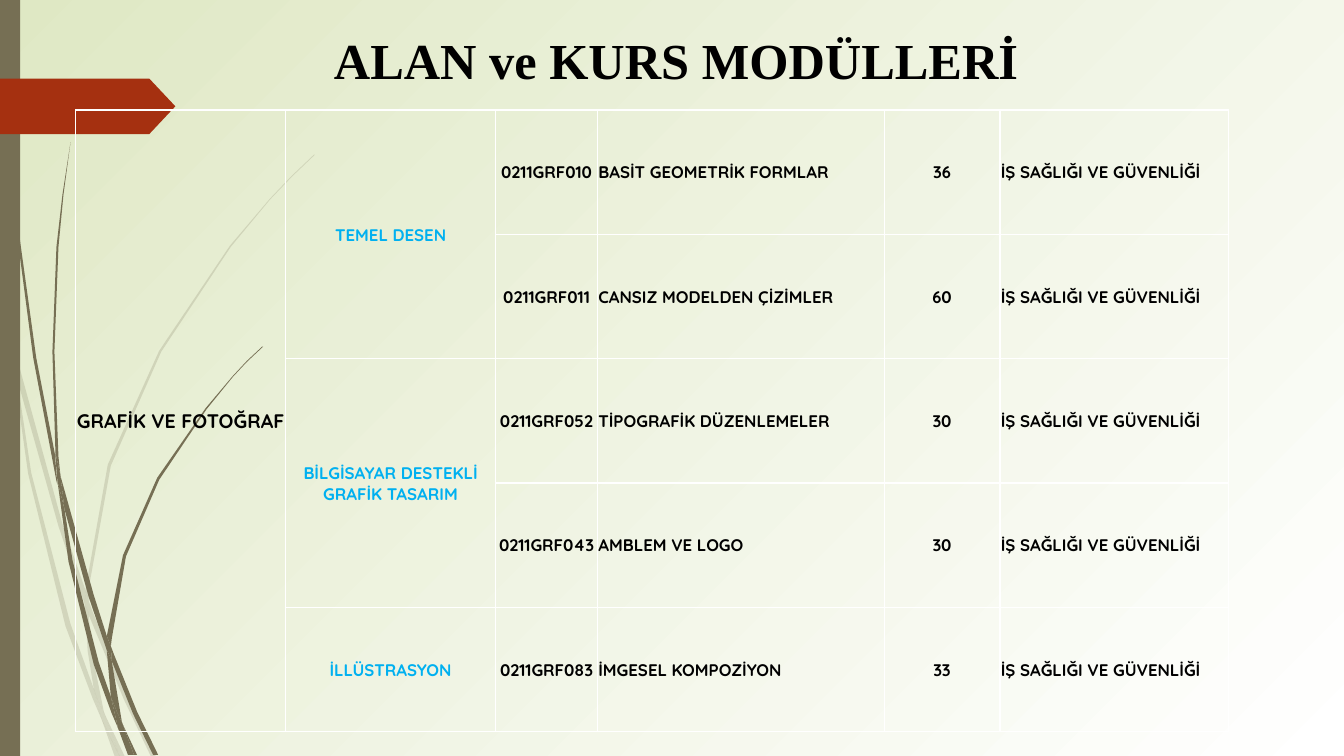
"""Builds the slide listing the modules of the graphics and photography courses."""
from lxml import etree
from pptx import Presentation
from pptx.dml.color import RGBColor
from pptx.enum.shapes import MSO_SHAPE
from pptx.enum.text import MSO_ANCHOR, PP_ALIGN
from pptx.oxml import parse_xml
from pptx.oxml.ns import qn
from pptx.util import Cm, Pt

LEFT, CENTER = PP_ALIGN.LEFT, PP_ALIGN.CENTER
TOP, MIDDLE = MSO_ANCHOR.TOP, MSO_ANCHOR.MIDDLE
RECTANGLE, PENTAGON = MSO_SHAPE.RECTANGLE, MSO_SHAPE.PENTAGON

NS = 'xmlns:a="http://schemas.openxmlformats.org/drawingml/2006/main"'
BLACK, WHITE, BLUE = "000000", "FFFFFF", "00B0F0"
OLIVE, RUST, PALE_GREEN = "766F54", "A53010", "DFE8C4"
BODY_FONT, TITLE_FONT = "Quicksand", "Times New Roman"

GRASS_UNIT = Cm(0.0254)
PALE_GRASS = [
    [(11, 350), (9, 322), (0, 282), (0, 299), (10, 344)],
    [(58, 522), (84, 599), (85, 586), (62, 520), (14, 345), (17, 376)],
    [(92, 607), (88, 596), (88, 610), (123, 694), (150, 751), (155, 751), (127, 692)],
    [(119, 751), (124, 751), (105, 711)],
    [(93, 683), (70, 619), (31, 469), (17, 376), (11, 350), (28, 470), (65, 621),
     (92, 693), (101, 714), (99, 707)],
    [(84, 599), (87, 646), (93, 683), (96, 692), (105, 711), (103, 706), (91, 646),
     (88, 610), (88, 608)],
    [(88, 584), (110, 462), (160, 349), (229, 245), (268, 198), (290, 175), (312, 154),
     (312, 153), (289, 175), (268, 197), (228, 244), (158, 348), (107, 461), (85, 584),
     (85, 586), (88, 596)],
    [(101, 714), (114, 751), (119, 751)],
    [(88, 608), (88, 610), (88, 596), (85, 586), (84, 599)],
    [(96, 692), (93, 683), (99, 707), (101, 714), (119, 751), (105, 711)],
]
DARK_GRASS = [
    [(7, 110), (17, 233), (33, 355), (56, 477), (57, 481), (55, 457), (55, 453),
     (36, 355), (19, 232), (8, 109), (5, 48), (4, 0), (3, 0), (4, 48)],
    [(88, 592), (106, 645), (106, 633), (106, 631), (93, 590), (60, 472), (64, 505)],
    [(113, 649), (110, 641), (111, 656), (132, 708), (152, 749), (157, 749), (136, 706)],
    [(110, 691), (98, 657), (72, 556), (64, 505), (57, 477), (68, 557), (93, 659),
     (111, 708), (117, 722), (116, 717)],
    [(60, 472), (58, 453), (54, 349), (58, 245), (63, 193), (70, 141), (62, 193),
     (56, 245), (52, 349), (55, 449)],
    [(133, 749), (136, 749), (122, 719)],
    [(57, 477), (64, 505), (60, 472), (55, 449), (55, 453)],
    [(111, 633), (125, 552), (158, 476), (205, 406), (231, 374), (245, 359), (261, 344),
     (260, 344), (245, 358), (231, 373), (204, 405), (156, 474), (122, 551), (106, 631),
     (110, 641)],
    [(117, 722), (127, 749), (131, 749)],
    [(106, 645), (110, 691), (116, 706), (122, 719), (121, 716), (111, 656), (109, 651)],
    [(106, 645), (109, 651), (111, 656), (110, 641), (106, 631), (106, 633)],
    [(116, 706), (110, 691), (116, 717), (117, 722), (130, 749), (133, 749), (122, 719)],
]

FIELD = "GRAFİK VE FOTOĞRAF"
SAFETY = "İŞ SAĞLIĞI VE GÜVENLİĞİ"
COURSES = [
    ("TEMEL DESEN", [("0211GRF010", "BASİT GEOMETRİK FORMLAR", "36"),
                     ("0211GRF011", "CANSIZ MODELDEN ÇİZİMLER", "60")]),
    ("BİLGİSAYAR DESTEKLİ GRAFİK TASARIM",
     [("0211GRF052", "TİPOGRAFİK DÜZENLEMELER", "30"),
      ("0211GRF043", "AMBLEM VE LOGO", "30")]),
    ("İLLÜSTRASYON", [("0211GRF083", "İMGESEL KOMPOZİYON", "33")]),
]
COLUMN_WIDTHS = [5.29, 5.29, 2.57, 7.22, 2.92, 5.77]


def rgb(value):
    """Return the colour of a hex string."""
    return RGBColor.from_string(value)


def paint(sp, color, alpha=100):
    """Fill a shape without line or shadow, at an opacity in percent."""
    sp.shadow.inherit = False
    sp.line.fill.background()
    sp.fill.solid()
    sp.fill.fore_color.rgb = rgb(color)
    if alpha < 100:
        clr = sp.fill._xPr.find(qn("a:solidFill"))[0]
        etree.SubElement(clr, qn("a:alpha")).set("val", str(alpha * 1000))


def set_font(p, name, size, color, align):
    """Format one bold paragraph."""
    p.alignment = align
    p.font.name, p.font.size, p.font.bold = name, Pt(size), True
    p.font.color.rgb = rgb(color)


def add_background(s):
    """Spread a radial gradient from the bottom right corner."""
    fill = s.background.fill
    fill.gradient()
    for stop, color, position in zip(fill.gradient_stops, (WHITE, PALE_GREEN), (0, 1)):
        stop.color.rgb, stop.position = rgb(color), position
    grad = s.background._cSld.find(".//" + qn("a:gradFill"))
    grad.replace(grad.find(qn("a:lin")), parse_xml(
        f'<a:path {NS} path="circle"><a:fillToRect l="100000" t="100000"/></a:path>'))


def add_grass(s, pieces, alpha):
    """Draw the pieces of one tuft of grass."""
    for outline in pieces:
        builder = s.shapes.build_freeform(*outline[0], scale=GRASS_UNIT)
        builder.add_line_segments(outline[1:], close=True)
        paint(builder.convert_to_shape(), OLIVE, alpha)


def add_decoration(s, height):
    """Draw the grass, the side bar and the arrow tag on the left."""
    add_grass(s, PALE_GRASS, 20)
    add_grass(s, DARK_GRASS, 100)
    paint(s.shapes.add_shape(RECTANGLE, 0, 0, Cm(0.51), height), OLIVE)
    tag = s.shapes.add_shape(PENTAGON, 0, Cm(1.98), Cm(4.42), Cm(1.4))
    tag.adjustments[0] = 0.47
    paint(tag, RUST)


def add_title(s, text, left, top, width, height):
    """Place the slide title in its box."""
    sp = s.shapes.title
    sp.left, sp.top, sp.width, sp.height = left, top, width, height
    tf = sp.text_frame
    tf.text, tf.vertical_anchor = text, TOP
    set_font(tf.paragraphs[0], TITLE_FONT, 36, BLACK, LEFT)


def format_cell(cell):
    """Give a cell white borders, no fill and narrow margins."""
    cell.fill.background()
    cell.vertical_anchor = MIDDLE
    cell.margin_left = cell.margin_right = cell.margin_top = Cm(0.02)
    cell.margin_bottom = 0
    for i, side in enumerate("LRTB"):
        cell._tc.get_or_add_tcPr().insert(i, parse_xml(
            f'<a:ln{side} {NS} w="12700"><a:solidFill><a:srgbClr val="{WHITE}"/>'
            f'</a:solidFill></a:ln{side}>'))


def write_cell(cell, text, color=BLACK, align=CENTER, size=12):
    """Write one paragraph into a cell."""
    cell.text = text
    set_font(cell.text_frame.paragraphs[0], BODY_FONT, size, color, align)


def add_module_table(s, left, top, width, height):
    """Place the table of courses and modules in its box."""
    count = sum(len(modules) for _, modules in COURSES)
    table = s.shapes.add_table(count, len(COLUMN_WIDTHS), left, top, width, height).table
    table.first_row = table.horz_banding = False
    for column, share in zip(table.columns, COLUMN_WIDTHS):
        column.width = int(width * share / sum(COLUMN_WIDTHS))
    for cell in table.iter_cells():
        format_cell(cell)
    table.cell(0, 0).merge(table.cell(count - 1, 0))
    write_cell(table.cell(0, 0), FIELD, size=14)
    row = 0
    for course, modules in COURSES:
        if len(modules) > 1:
            table.cell(row, 1).merge(table.cell(row + len(modules) - 1, 1))
        write_cell(table.cell(row, 1), course, BLUE)
        for code, module, hours in modules:
            write_cell(table.cell(row, 2), code)
            write_cell(table.cell(row, 3), module, align=LEFT)
            write_cell(table.cell(row, 4), hours)
            write_cell(table.cell(row, 5), SAFETY, align=LEFT)
            row += 1


def main():
    """Build and save the presentation."""
    prs = Presentation()
    prs.slide_width, prs.slide_height = Cm(33.87), Cm(19.05)
    s = prs.slides.add_slide(prs.slide_layouts[5])
    add_background(s)
    add_decoration(s, prs.slide_height)
    add_title(s, "ALAN ve KURS MODÜLLERİ", Cm(8.16), Cm(0.61), Cm(23.8), Cm(4.67))
    add_module_table(s, Cm(1.91), Cm(2.77), Cm(29.06), Cm(15.67))
    prs.save("out.pptx")


if __name__ == "__main__":
    main()
